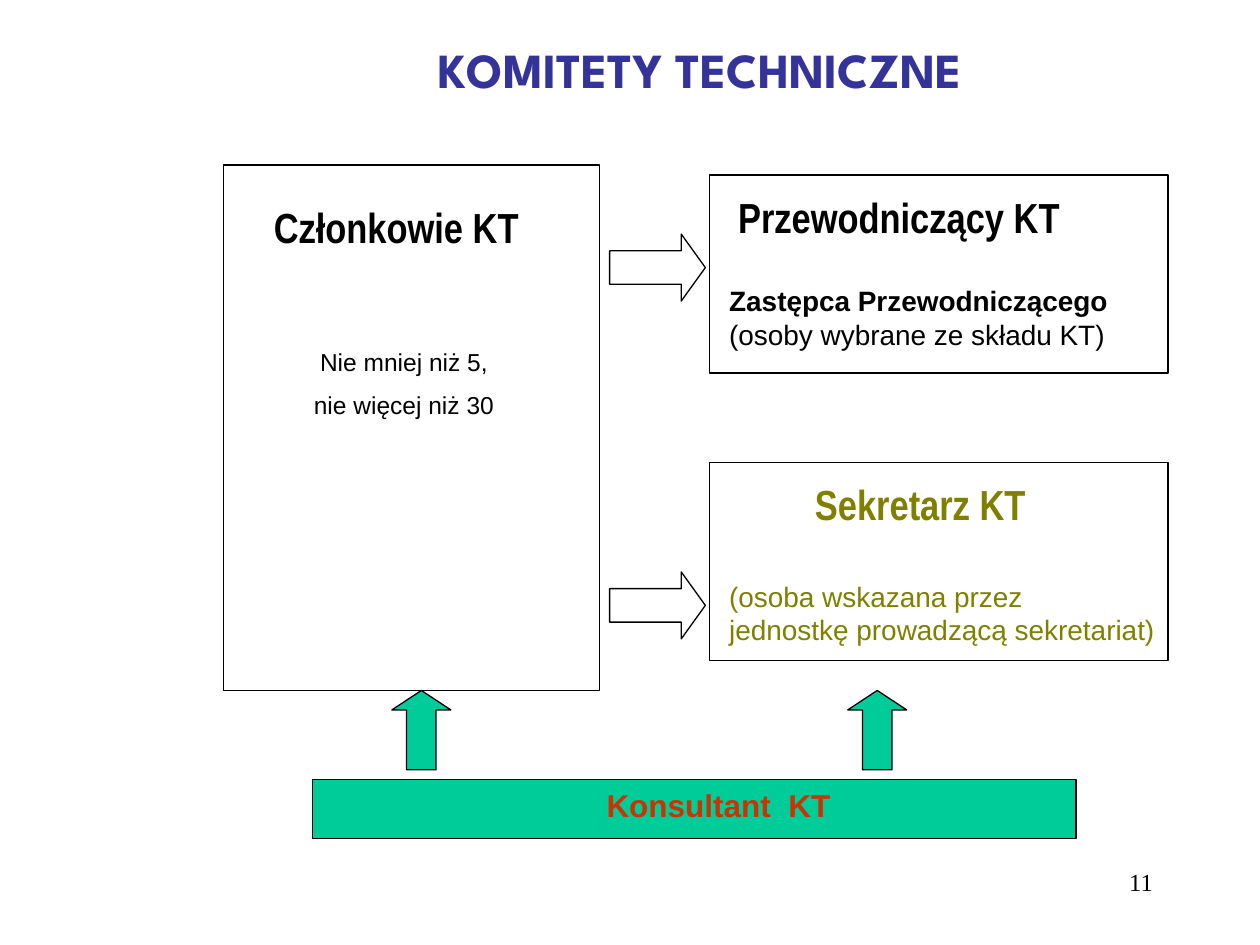
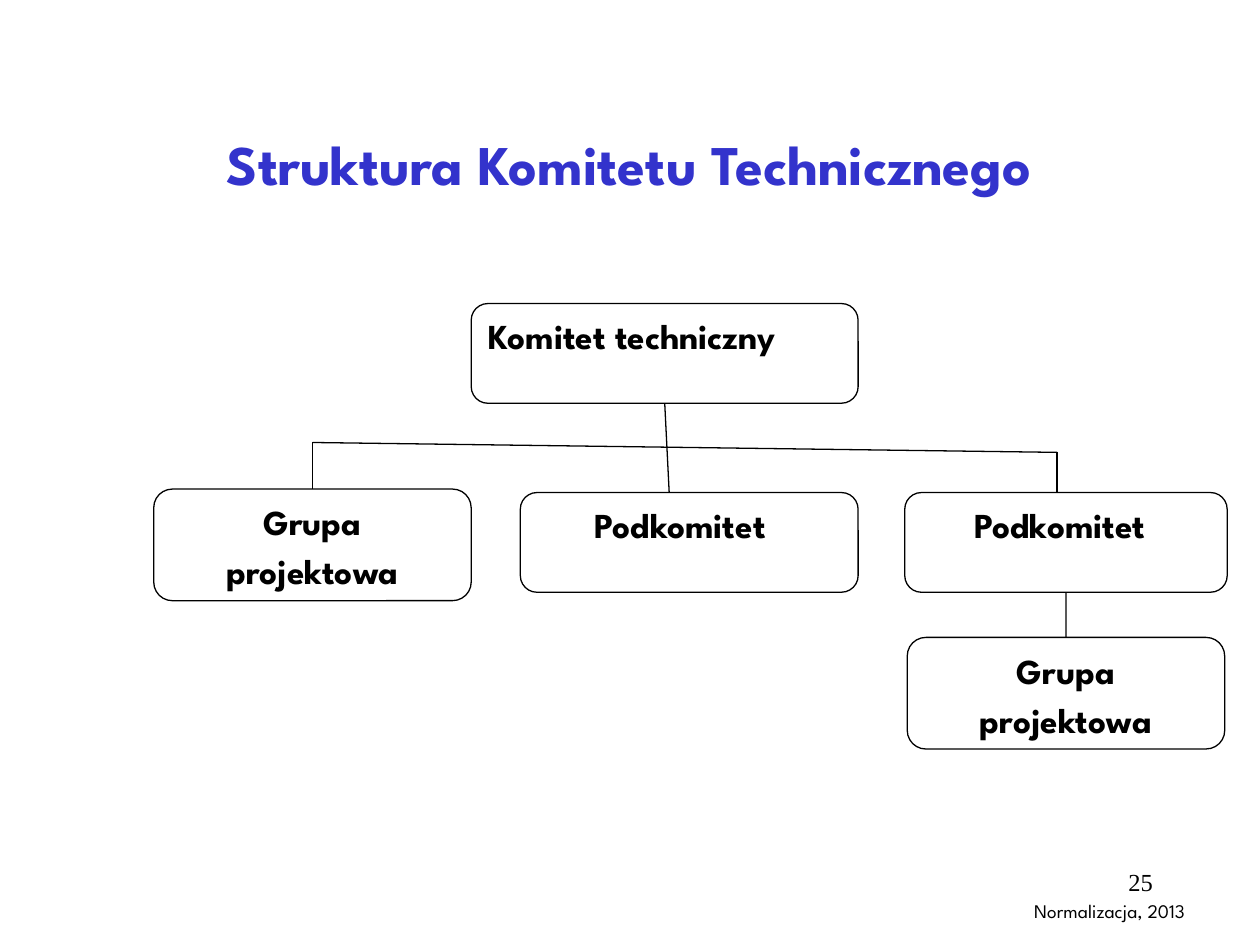
import pptx
import pptx.util
import pptx.dml.color
import pptx.enum.shapes
import pptx.enum.text
import lxml.etree

Cm = pptx.util.Cm
Pt = pptx.util.Pt
colour = pptx.dml.color.RGBColor.from_string
preset = pptx.enum.shapes.MSO_SHAPE
anchors = pptx.enum.text.MSO_ANCHOR
aligns = pptx.enum.text.PP_ALIGN

BLACK = "000000"
GREEN = "00CC99"
OLIVE = "808000"
DISPLAY = "League Spartan"
NARROW = "Arial Narrow"
PAGE_NUMBER_AREA = (18.21, 17.35, 5.28, 1.27)


def add_block(slide, area, outline=None, fill=None, wrap=True):
    lengths = [Cm(value) for value in area]
    if outline is None:
        block = slide.shapes.add_textbox(*lengths)
    else:
        block = slide.shapes.add_shape(outline, *lengths)
        block.shadow.inherit = False
        block.line.color.rgb = colour(BLACK)
        block.line.width = Pt(0.75)
        if fill:
            block.fill.solid()
            block.fill.fore_color.rgb = colour(fill)
        else:
            block.fill.background()
    block.text_frame.word_wrap = wrap
    block.text_frame.vertical_anchor = anchors.TOP
    return block


def write(block, text, size=16, font="Arial", color=BLACK, bold=False,
          align=aligns.LEFT, before=0, indent=0):
    frame = block.text_frame
    paragraph = frame.add_paragraph() if frame.text else frame.paragraphs[0]
    paragraph.alignment = align
    if before:
        paragraph.space_before = Pt(before)
    if indent:
        paragraph._p.get_or_add_pPr().set("marL", str(Cm(indent)))
    run = paragraph.add_run()
    run.text = text
    run.font.size = Pt(size)
    run.font.name = font
    run.font.bold = bold
    run.font.color.rgb = colour(color)


deck = pptx.Presentation()
deck.slide_width = Cm(25.4)
deck.slide_height = Cm(19.05)

pages = []
for heading, area, size, color, right_inset, number in [
    ("KOMITETY TECHNICZNE", (3.13, 0.59, 22.27, 1.6), 28, "333399", 0.55, "11"),
    ("Struktura Komitetu Technicznego", (1.9, 1.7, 21.59, 3.18), 32, "3333CC", 0.25, "25"),
]:
    page = deck.slides.add_slide(deck.slide_layouts[6])
    title = add_block(page, area)
    title.text_frame.vertical_anchor = anchors.MIDDLE
    title.text_frame.margin_right = Cm(right_inset)
    write(title, heading, size=size, font=DISPLAY, color=color, bold=True, align=aligns.CENTER)
    page_number = add_block(page, PAGE_NUMBER_AREA)
    write(page_number, number, size=14, font="Times New Roman", align=aligns.RIGHT)
    pages.append(page)
committees, structure = pages

for area, fill in [
    ((6.3, 15.72, 15.39, 1.19), GREEN),
    ((4.5, 3.33, 7.59, 10.59), None),
    ((14.3, 3.53, 9.25, 3.99), None),
    ((14.3, 9.32, 9.25, 3.99), None),
]:
    add_block(committees, area, preset.RECTANGLE, fill)

for top in (4.72, 11.53):
    arrow = add_block(committees, (12.29, top, 1.93, 1.35), preset.RIGHT_ARROW)
    arrow.adjustments[1] = 0.36
for left in (7.9, 17.09):
    arrow = add_block(committees, (left, 13.92, 1.19, 1.6), preset.UP_ARROW, GREEN)
    arrow.adjustments[1] = 0.33

members = add_block(committees, (4.5, 3.94, 7.29, 6.65))
write(members, "Członkowie KT", size=24, font=NARROW, bold=True, indent=0.77)
write(members, "Nie mniej niż 5,", size=14, align=aligns.CENTER, before=54)
write(members, "nie więcej niż 30", size=14, align=aligns.CENTER, before=8)

chair = add_block(committees, (14.45, 3.73, 8.15, 3.48), wrap=False)
write(chair, "Przewodniczący KT", size=24, font=NARROW, bold=True, indent=0.18)
write(chair, "Zastępca Przewodniczącego", bold=True, before=24)
write(chair, "(osoby wybrane ze składu KT)")

secretary = add_block(committees, (14.45, 9.53, 9.1, 3.63), wrap=False)
write(secretary, "Sekretarz KT", size=24, font=NARROW, color=OLIVE, bold=True, indent=1.73)
write(secretary, "(osoba wskazana przez", color=OLIVE, before=28.5)
write(secretary, "jednostkę prowadzącą sekretariat)", color=OLIVE)

consultant = add_block(committees, (10.69, 15.72, 7.59, 1.02))
write(consultant, "Konsultant  KT", size=18, color="CC3300", bold=True, align=aligns.CENTER)

units = []
for lines, area, align, right_inset in [
    (["Komitet techniczny"], (9.5, 6.12, 7.8, 2.01), aligns.LEFT, 0.25),
    (["Podkomitet"], (10.49, 9.93, 6.81, 2.01), aligns.CENTER, 0.61),
    (["Grupa", "projektowa"], (3.1, 9.86, 6.4, 2.25), aligns.CENTER, 0.25),
    (["Podkomitet"], (18.24, 9.93, 6.5, 2.01), aligns.CENTER, 0.49),
    (["Grupa", "projektowa"], (18.29, 12.85, 6.4, 2.25), aligns.CENTER, 0.25),
]:
    unit = add_block(structure, area, preset.ROUNDED_RECTANGLE)
    unit.text_frame.margin_right = Cm(right_inset)
    for position, line in enumerate(lines):
        write(unit, line, size=20, font=DISPLAY, bold=True, align=align, before=4 * position)
    units.append(unit)
committee, middle_subcommittee, project_group, subcommittee, subgroup = units

for start, end, upper, lower in [
    ((6.3, 8.92), (21.31, 9.12), None, None),
    ((6.3, 8.92), (6.3, 9.86), None, project_group),
    ((21.49, 11.94), (21.49, 12.85), subcommittee, subgroup),
    ((21.31, 9.12), (21.31, 9.93), None, None),
    ((13.4, 8.13), (13.49, 9.93), committee, None),
]:
    branch = structure.shapes.add_connector(
        pptx.enum.shapes.MSO_CONNECTOR.STRAIGHT, *[Cm(value) for value in start + end])
    branch.line.color.rgb = colour(BLACK)
    branch.line.width = Pt(0.75)
    lxml.etree.SubElement(branch._element.spPr, pptx.oxml.ns.qn("a:effectLst"))
    if upper:
        branch.begin_connect(upper, 2)
    if lower:
        branch.end_connect(lower, 0)

source_note = add_block(structure, (20.6, 18.01, 4.52, 0.74))
write(source_note, "Normalizacja, 2013", size=11, font=DISPLAY)

deck.save("out.pptx")
